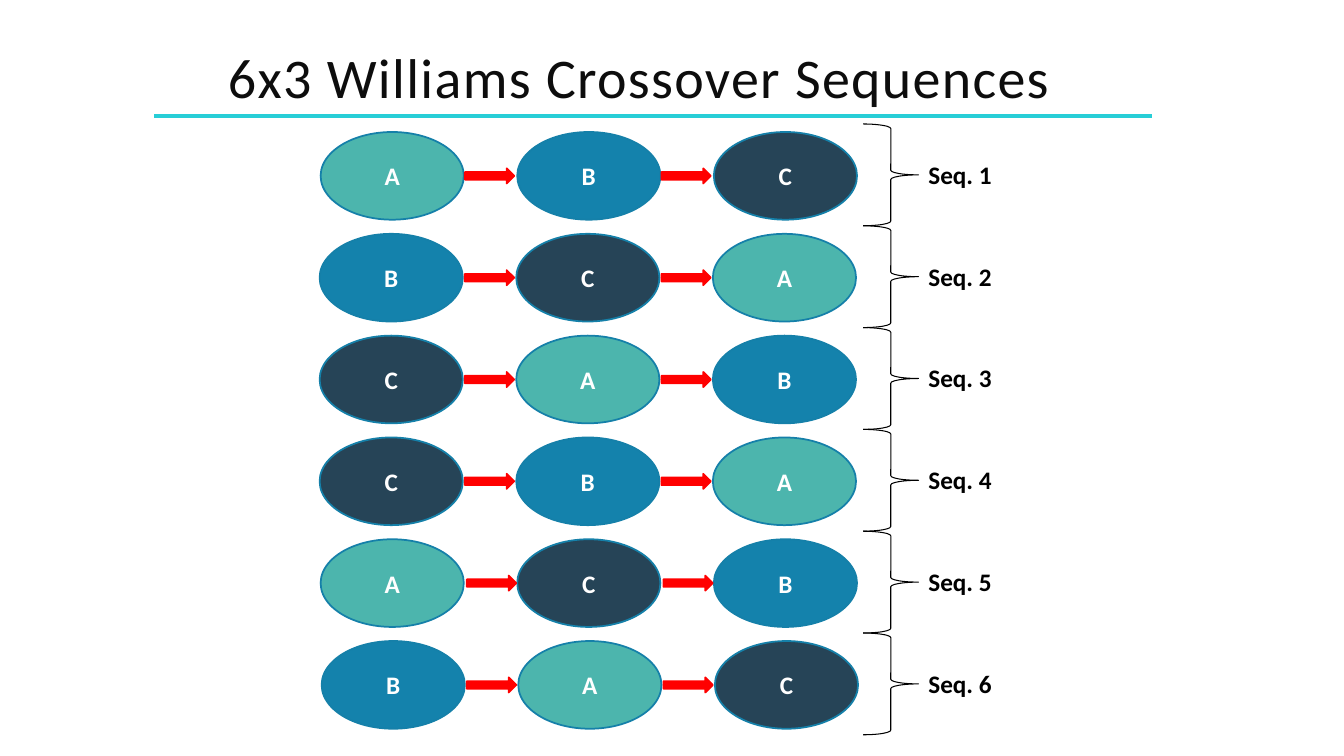
from pptx import Presentation, util as u
from pptx.dml import color as col
from pptx.enum import shapes, text
from pptx.oxml import xmlchemy as xml

KIND = shapes.MSO_SHAPE
ALIGN = text.PP_ALIGN
MID = text.MSO_ANCHOR.MIDDLE

# Treatment fills, and each sequence with its small sideways shifts
FILLS = {"A": "4CB5AD", "B": "1482AC", "C": "264457"}
ROWS = [("ABC", 0.01, 0), ("BCA", 0, 0), ("CAB", 0, 0),
        ("CBA", 0, 0), ("ACB", 0.01, 0.02), ("BAC", 0.02, 0.02)]
PITCH = 1.01
STEP = 1.95


def rgb(hue):
    return col.RGBColor.from_string(hue)


class Deck:
    font = {"name": "Calibri", "size": u.Pt(18), "bold": True}

    def __init__(self):
        self.prs = Presentation()
        self.prs.slide_width = u.Inches(13.33)
        self.prs.slide_height = u.Inches(7.5)
        self.slide = self.prs.slides.add_slide(self.prs.slide_layouts[6])

    def letter(self, shape, words, hue, align, **style):
        para = shape.text_frame.paragraphs[0]
        para.alignment = align
        run = para.add_run()
        run.text = words
        for key, val in {**self.font, **style}.items():
            setattr(run.font, key, val)
        run.font.color.rgb = rgb(hue)
        return para, run

    def label(self, box, words, hue, align=ALIGN.LEFT, anchor=None, **style):
        shape = self.slide.shapes.add_textbox(*map(u.Inches, box))
        shape.text_frame.word_wrap = True
        shape.text_frame.vertical_anchor = anchor
        return self.letter(shape, words, hue, align, **style)

    def shape(self, kind, box, fill, line, width, words=""):
        shape = self.slide.shapes.add_shape(kind, *map(u.Inches, box))
        shape.shadow.inherit = False
        if fill:
            shape.fill.solid()
            shape.fill.fore_color.rgb = rgb(fill)
        else:
            shape.fill.background()
        shape.line.color.rgb = rgb(line)
        shape.line.width = u.Pt(width)
        if words:
            shape.text_frame.vertical_anchor = MID
            self.letter(shape, words, "FFFFFF", ALIGN.CENTER)

    def rule(self, x1, x2, y, hue, width):
        line = self.slide.shapes.add_connector(
            shapes.MSO_CONNECTOR.STRAIGHT, *map(u.Inches, (x1, y, x2, y)))
        line.line.color.rgb = rgb(hue)
        line.line.width = u.Pt(width)
        line._element.spPr.append(xml.OxmlElement("a:effectLst"))


def main():
    deck = Deck()

    # Title with its rule
    deck.rule(1.53, 11.43, 1.15, "27CED7", 3)
    para, run = deck.label((1.32, 0.2, 10.04, 1.23),
                           "6x3 Williams Crossover Sequences", "0D0D0D",
                           ALIGN.CENTER, MID, size=u.Pt(40), bold=False)
    para.line_spacing = 0.8
    run._r.get_or_add_rPr().set("spc", "100")

    # One row per sequence: brace, label, ovals, arrows
    for row, (seq, shift, push) in enumerate(ROWS):
        top = row * PITCH
        deck.shape(KIND.RIGHT_BRACE, (8.56, 1.23 + top, 0.55, 1.01),
                   None, "000000", 0.75)
        deck.label((9.11, 1.53 + top, 0.9, 0.4), f"Seq. {row + 1}", "000000")
        for spot, drug in enumerate(seq):
            deck.shape(KIND.OVAL,
                       (3.17 + shift + spot * STEP, 1.31 + top, 1.42, 0.87),
                       FILLS[drug], "1580A9", 1.25, drug)
        for spot in range(len(seq) - 1):
            deck.shape(KIND.RIGHT_ARROW,
                       (4.61 + push + spot * STEP, 1.67 + top, 0.49, 0.15),
                       "FF0000", "FF0000", 1.25)

    deck.prs.save("out.pptx")


if __name__ == "__main__":
    main()
